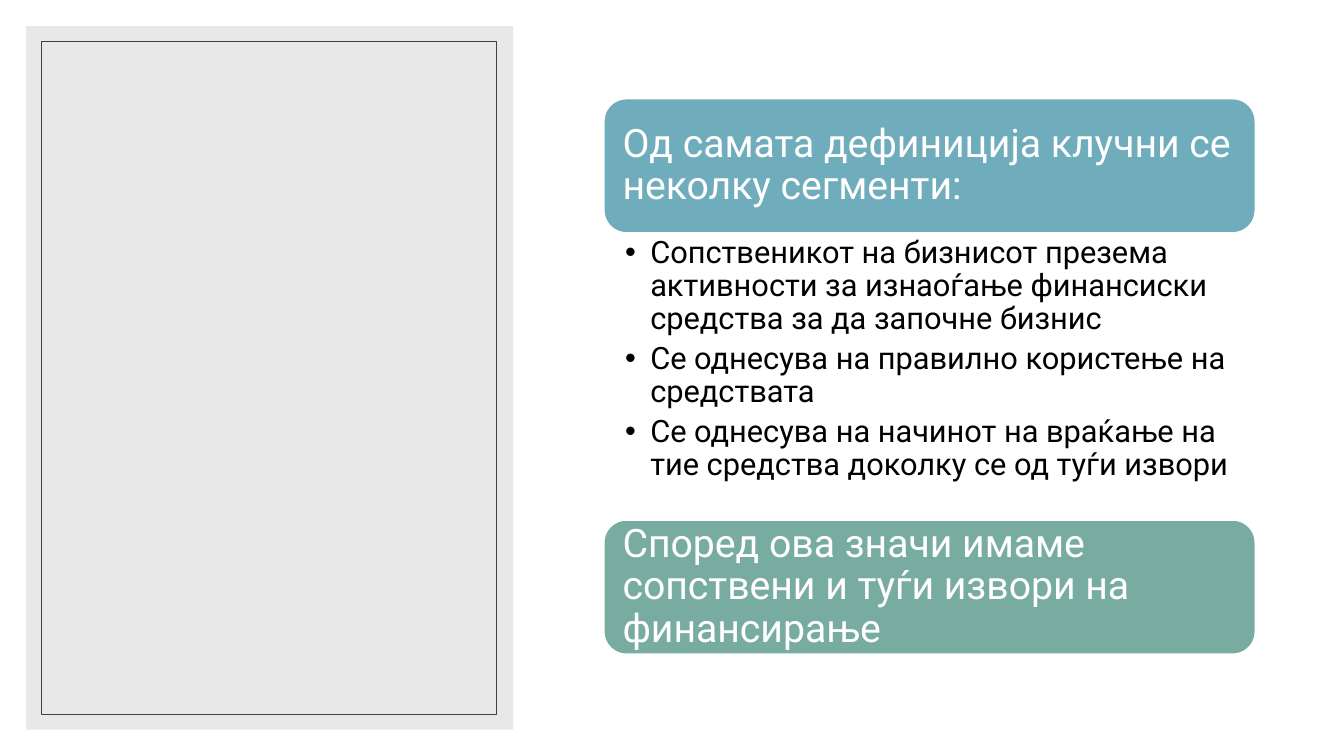
from lxml.etree import SubElement
from pptx import Presentation
from pptx.dml.color import RGBColor
from pptx.enum.shapes import MSO_SHAPE
from pptx.enum.text import MSO_ANCHOR, PP_ALIGN
from pptx.oxml.ns import qn
from pptx.util import Pt

EMU_PER_PX = 9144
FONT = "Roboto"
LIST_LEFT, LIST_WIDTH = 599, 646
CARD_HEIGHT = 133
CARDS = [
    (98, "6FACBC", "Од самата дефиниција клучни се неколку сегменти:"),
    (516, "79ACA1", "Според ова значи имаме сопствени и туѓи извори на финансирање"),
]
SEGMENTS = [
    "Сопственикот на бизнисот презема активности за изнаоѓање финансиски средства за да започне бизнис",
    "Се однесува на правилно користење на средствата",
    "Се однесува на начинот на враќање на тие средства доколку се од туѓи извори",
]


def px(n):
    return n * EMU_PER_PX


def color(value):
    return RGBColor.from_string(value)


def add_box(s, kind, box, fill=None, line=None, line_width=1, alpha=None):
    sp = s.shapes.add_shape(kind, *map(px, box))
    sp.shadow.inherit = False
    if fill:
        sp.fill.solid()
        sp.fill.fore_color.rgb = color(fill)
    else:
        sp.fill.background()
    if alpha:
        srgb = sp.fill._xPr.find(".//" + qn("a:srgbClr"))
        SubElement(srgb, qn("a:alpha"), val=str(alpha * 1000))
    if line:
        sp.line.color.rgb = color(line)
        sp.line.width = Pt(line_width)
    else:
        sp.line.fill.background()
    return sp


def set_margins(tf, left, top, right, bottom):
    tf.word_wrap = True
    tf.margin_left, tf.margin_top = px(left), px(top)
    tf.margin_right, tf.margin_bottom = px(right), px(bottom)


def format_paragraph(p, size, text_color, space_after):
    p.alignment = PP_ALIGN.LEFT
    p.line_spacing = 0.9
    p.space_after = Pt(space_after)
    for r in p.runs:
        r.font.name = FONT
        r.font.size = Pt(size)
        r.font.color.rgb = color(text_color)


def add_bullet(p, indent):
    pPr = p._p.get_or_add_pPr()
    pPr.set("marL", str(px(indent)))
    pPr.set("indent", str(px(-indent)))
    SubElement(pPr, qn("a:buFont"), typeface="Arial")
    SubElement(pPr, qn("a:buChar"), char="•")


def add_card(s, top, fill, text):
    box = (LIST_LEFT, top, LIST_WIDTH, CARD_HEIGHT)
    sp = add_box(s, MSO_SHAPE.ROUNDED_RECTANGLE, box, fill, "FFFFFF")
    tf = sp.text_frame
    set_margins(tf, 12, 12, 12, 12)
    tf.vertical_anchor = MSO_ANCHOR.MIDDLE
    tf.text = text
    format_paragraph(tf.paragraphs[0], 28, "FFFFFF", 0)


def add_bullet_list(s, box, items):
    tf = s.shapes.add_textbox(*map(px, box)).text_frame
    set_margins(tf, 21, 4, 22, 4)
    tf.text = "\n".join(items)
    for p in tf.paragraphs:
        format_paragraph(p, 22, "000000", 4.5)
        add_bullet(p, 25)


def main():
    prs = Presentation()
    prs.slide_width, prs.slide_height = px(1333), px(750)
    s = prs.slides.add_slide(prs.slide_layouts[6])
    add_box(s, MSO_SHAPE.RECTANGLE, (0, 0, 1333, 750), "FFFFFF")
    add_box(s, MSO_SHAPE.RECTANGLE, (26, 26, 483, 698), "D9D9D9", alpha=60)
    add_box(s, MSO_SHAPE.RECTANGLE, (41, 41, 451, 668), line="404040", line_width=0.5)
    for top, fill, text in CARDS:
        add_card(s, top, fill, text)
    add_bullet_list(s, (LIST_LEFT, 231, LIST_WIDTH, 285), SEGMENTS)
    prs.save("out.pptx")


if __name__ == "__main__":
    main()
